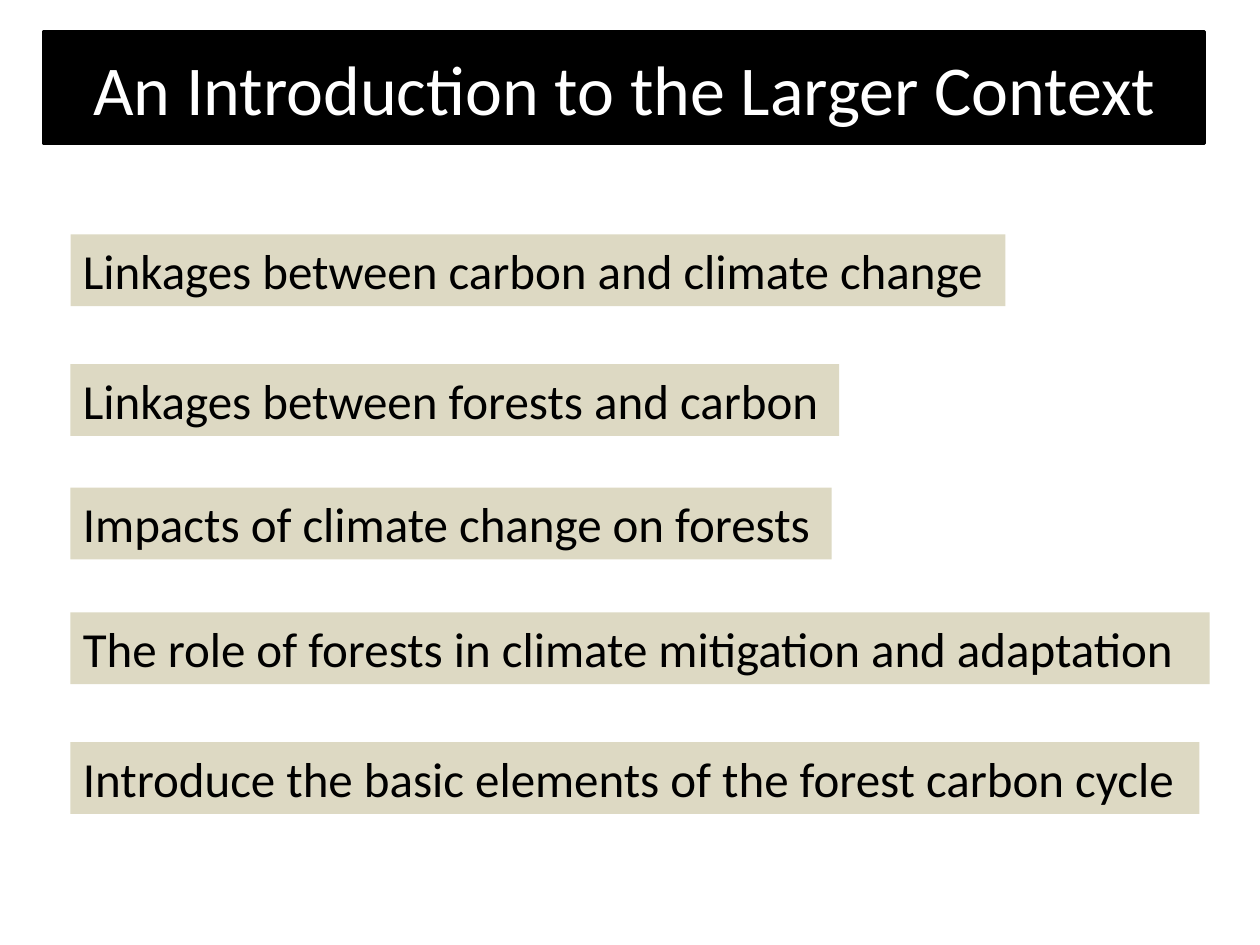
import pptx
import pptx.dml.color
import pptx.enum.text
import pptx.util

RGBColor = pptx.dml.color.RGBColor
Inches, Pt = pptx.util.Inches, pptx.util.Pt
MSO_ANCHOR = pptx.enum.text.MSO_ANCHOR
MSO_AUTO_SIZE = pptx.enum.text.MSO_AUTO_SIZE
PP_ALIGN = pptx.enum.text.PP_ALIGN

BLACK = RGBColor(0x00, 0x00, 0x00)
WHITE = RGBColor(0xFF, 0xFF, 0xFF)
TAN = RGBColor(0xDD, 0xD9, 0xC3)

SLIDE_W, SLIDE_H = 10, 7.5
TITLE_BOX = (0.35, 0.25, 9.21, 0.89)
TOPICS_BOX = (0.56, 1.86, 9.04, 4.6)
TOPIC_H = 0.57
TITLE_FONT = {"name": "Calibri", "size": Pt(40), "bold": False}
TOPIC_FONT = {"name": "Calibri", "size": Pt(28)}
TITLE_FRAME = {"word_wrap": True, "auto_size": MSO_AUTO_SIZE.NONE,
               "vertical_anchor": MSO_ANCHOR.MIDDLE}
TOPIC_FRAME = {"word_wrap": False, "auto_size": MSO_AUTO_SIZE.SHAPE_TO_FIT_TEXT,
               "vertical_anchor": MSO_ANCHOR.TOP}

TOPICS = [
    ("Linkages between carbon and climate change", 0, 7.42),
    ("Linkages between forests and carbon", 1.03, 6.1),
    ("Impacts of climate change on forests", 2.01, 6.04),
    ("The role of forests in climate mitigation and adaptation", 3, 9.04),
    ("Introduce the basic elements of the forest carbon cycle", 4.03, 8.96),
]


def set_attrs(obj, values):
    """Set each named format value on an object."""
    for name, value in values.items():
        setattr(obj, name, value)


def fill_text(sp, text, frame, font, color, align):
    """Write one formatted paragraph into a shape."""
    tf = sp.text_frame
    set_attrs(tf, frame)
    p = tf.paragraphs[0]
    p.alignment = align
    r = p.add_run()
    r.text = text
    set_attrs(r.font, font)
    r.font.color.rgb = color


def set_fill(sp, color):
    """Give a shape a solid fill."""
    sp.fill.solid()
    sp.fill.fore_color.rgb = color


def add_title(s, box, text):
    """Place the title banner in its box."""
    sp = s.shapes.title
    names = ("left", "top", "width", "height")
    set_attrs(sp, dict(zip(names, map(Inches, box))))
    set_fill(sp, BLACK)
    sp.line.color.rgb = BLACK
    sp.line.width = Pt(2)
    fill_text(sp, text, TITLE_FRAME, TITLE_FONT, WHITE, PP_ALIGN.CENTER)


def add_topics(s, box, topics):
    """Stack the topic bars from the top left of the box."""
    left, top = box[:2]
    for text, offset, width in topics:
        sp = s.shapes.add_textbox(*map(Inches, (left, top + offset, width, TOPIC_H)))
        set_fill(sp, TAN)
        fill_text(sp, text, TOPIC_FRAME, TOPIC_FONT, BLACK, PP_ALIGN.LEFT)


def main():
    """Build and save the slide."""
    prs = pptx.Presentation()
    prs.slide_width, prs.slide_height = Inches(SLIDE_W), Inches(SLIDE_H)
    s = prs.slides.add_slide(prs.slide_layouts[5])
    add_title(s, TITLE_BOX, "An Introduction to the Larger Context")
    add_topics(s, TOPICS_BOX, TOPICS)
    prs.save("out.pptx")


if __name__ == "__main__":
    main()
